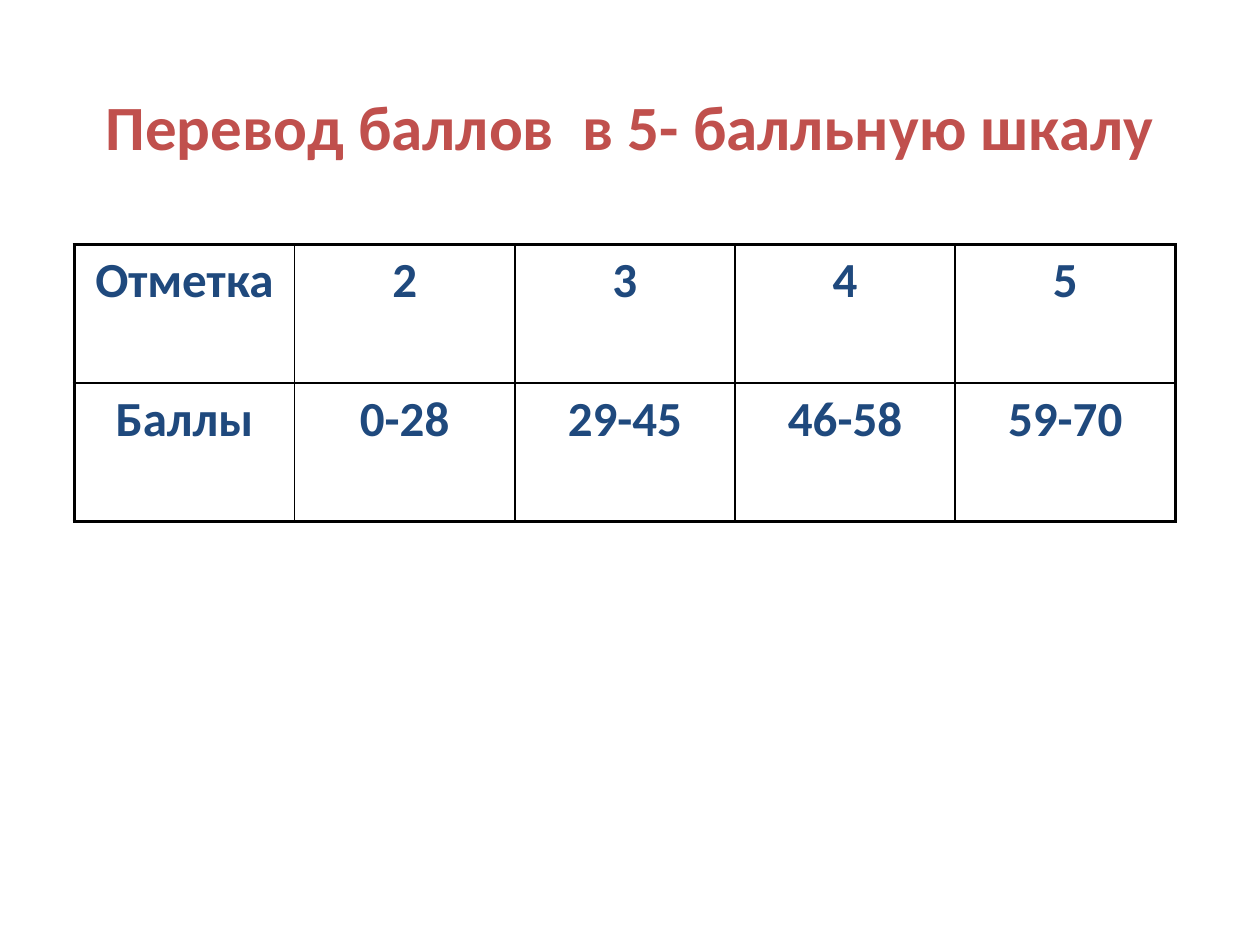
"""Build a slide with a table that converts points to the five-grade scale."""
from dataclasses import dataclass
from typing import Any

import pptx
import pptx.dml.color
import pptx.enum.text
import pptx.oxml
import pptx.oxml.ns
import pptx.util

RED = pptx.dml.color.RGBColor(0xC0, 0x50, 0x4D)
NAVY = pptx.dml.color.RGBColor(0x1F, 0x49, 0x7D)
BLACK = pptx.dml.color.RGBColor(0, 0, 0)
WIDTH, HEIGHT = pptx.util.Inches(10), pptx.util.Inches(7.5)
OUTER, INNER = 2.25, 1


@dataclass(frozen=True)
class Area:
    """A rectangle in shares of the slide's size."""

    left: float
    top: float
    width: float
    height: float

    def lengths(self) -> tuple[int, int, int, int]:
        """Return the rectangle in slide units."""
        return (round(self.left * WIDTH), round(self.top * HEIGHT),
                round(self.width * WIDTH), round(self.height * HEIGHT))


@dataclass(frozen=True)
class GradeRow:
    """A table row: its label and one value per grade."""

    label: str
    values: tuple[str, ...]


TITLE = "Перевод баллов  в 5- балльную шкалу"
TITLE_AREA = Area(0.05, 0.04, 0.9, 1 / 6)
TABLE_AREA = Area(0.059, 0.259, 0.874, 0.293)
ROWS = (
    GradeRow("Отметка", ("2", "3", "4", "5")),
    GradeRow("Баллы", ("0-28", "29-45", "46-58", "59-70")),
)


def apply(target: Any, values: dict[str, Any]) -> None:
    """Set each named attribute on the target."""
    for name, value in values.items():
        setattr(target, name, value)


def write(frame: Any, text: str, size: float, color: pptx.dml.color.RGBColor) -> None:
    """Write one centred bold paragraph."""
    para = frame.paragraphs[0]
    para.alignment = pptx.enum.text.PP_ALIGN.CENTER
    span = para.add_run()
    span.text = text
    apply(span.font, {"name": "Calibri", "size": pptx.util.Pt(size), "bold": True})
    span.font.color.rgb = color


def add_border(cell: Any, side: str, points: float) -> None:
    """Draw one black edge of a cell."""
    width = pptx.util.Pt(points)
    cell._tc.get_or_add_tcPr().append(pptx.oxml.parse_xml(
        f'<a:ln{side} {pptx.oxml.ns.nsdecls("a")} w="{width}"><a:solidFill>'
        f'<a:srgbClr val="{BLACK}"/></a:solidFill></a:ln{side}>'))


def add_title(page: Any) -> None:
    """Add the heading, set slightly below the middle of its box."""
    box = page.shapes.add_textbox(*TITLE_AREA.lengths())
    apply(box.text_frame, {
        "word_wrap": True,
        "vertical_anchor": pptx.enum.text.MSO_ANCHOR.MIDDLE,
        "margin_top": pptx.util.Inches(0.19),
    })
    write(box.text_frame, TITLE, 36, RED)


def add_grades(page: Any) -> None:
    """Add the grade table with a heavy frame and thin inner lines."""
    row_count, column_count = len(ROWS), len(ROWS[0].values) + 1
    table = page.shapes.add_table(row_count, column_count, *TABLE_AREA.lengths()).table
    apply(table, {"first_row": False, "horz_banding": False})
    for row, grades in enumerate(ROWS):
        for column, text in enumerate((grades.label, *grades.values)):
            cell = table.cell(row, column)
            edges = {
                "L": column == 0,
                "R": column == column_count - 1,
                "T": row == 0,
                "B": row == row_count - 1,
            }
            for side, is_outer in edges.items():
                add_border(cell, side, OUTER if is_outer else INNER)
            cell.fill.background()
            write(cell.text_frame, text, 28, NAVY)


def main() -> None:
    """Build and save the deck."""
    deck = pptx.Presentation()
    apply(deck, {"slide_width": WIDTH, "slide_height": HEIGHT})
    page = deck.slides.add_slide(deck.slide_layouts[6])
    add_title(page)
    add_grades(page)
    deck.save("out.pptx")


if __name__ == "__main__":
    main()
